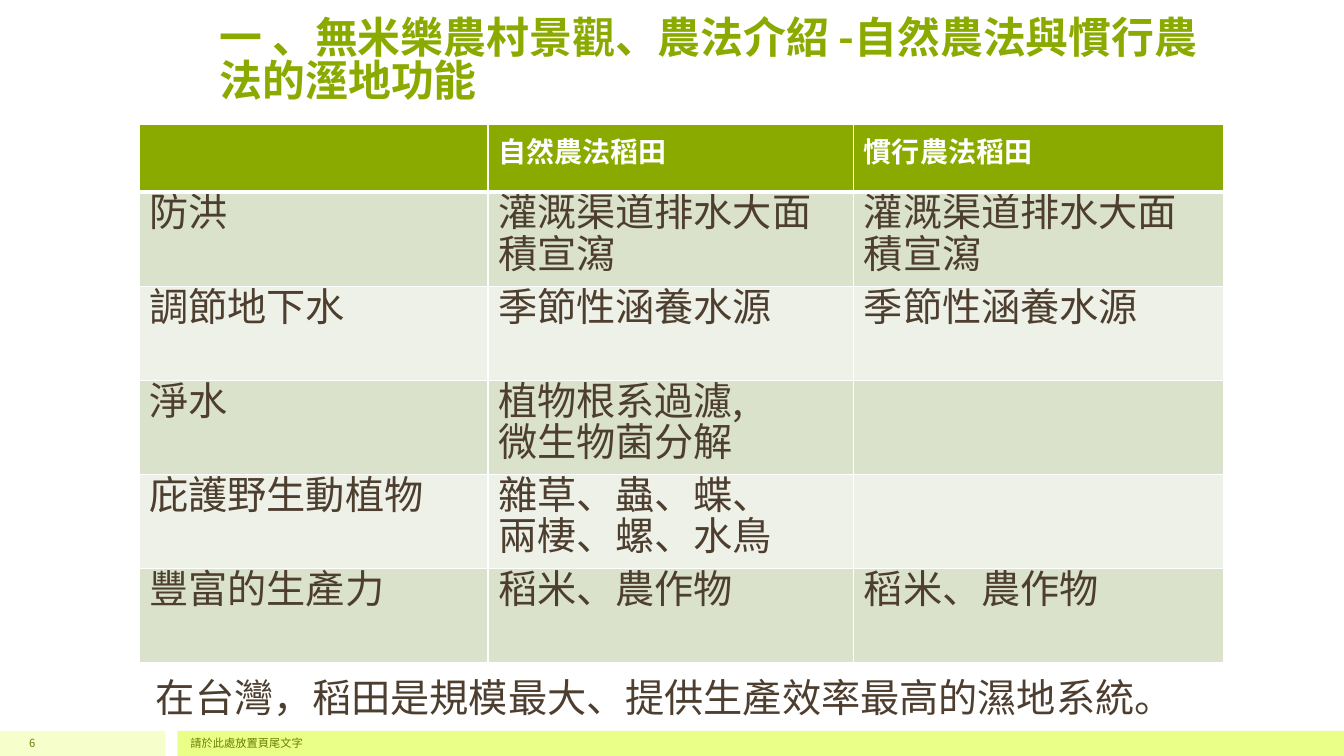
from dataclasses import dataclass

import lxml.etree
import pptx
import pptx.dml.color
import pptx.enum.shapes
import pptx.enum.text
import pptx.oxml.ns
import pptx.util

Cm, Pt = pptx.util.Cm, pptx.util.Pt
RGB = pptx.dml.color.RGBColor.from_string
ALIGN = pptx.enum.text.PP_ALIGN
ANCHOR = pptx.enum.text.MSO_ANCHOR
qn = pptx.oxml.ns.qn


@dataclass(frozen=True)
class Theme:
    green: str = "8BAA00"
    dark_green: str = "688000"
    brown: str = "4D3E2F"
    white: str = "FFFFFF"
    bands: tuple[str, str] = ("DAE2CC", "EEF1E7")
    title_size: float = 30.6
    body_size: float = 28
    header_size: float = 20
    footer_size: float = 8
    cjk: str = "Noto Sans CJK TC"
    cell_font: str = "Noto Sans CJK SC"
    latin: str = "Calibri"


@dataclass(frozen=True)
class Box:
    left: float
    top: float
    width: float
    height: float

    def emu(self) -> tuple[int, int, int, int]:
        return Cm(self.left), Cm(self.top), Cm(self.width), Cm(self.height)


@dataclass(frozen=True)
class Style:
    size: float
    color: str
    font: str
    bold: bool = False
    align: ALIGN = ALIGN.LEFT
    spacing: float | int | None = None


@dataclass(frozen=True)
class Bar:
    box: Box
    color: str


@dataclass(frozen=True)
class Label:
    box: Box
    text: str
    style: Style
    anchor: ANCHOR


THEME = Theme()
LINE = Pt(29.4)
TITLE = Style(THEME.title_size, THEME.green, THEME.cjk, bold=True, spacing=0.83)
HEADER = Style(THEME.header_size, THEME.white, THEME.latin, bold=True, spacing=LINE)
CELL = Style(THEME.body_size, THEME.brown, THEME.cell_font, spacing=LINE)
STATEMENT = Style(THEME.body_size, THEME.brown, THEME.latin, spacing=0.9)
FOOTER = Style(THEME.footer_size, THEME.dark_green, THEME.cjk)
NUMBER = Style(THEME.footer_size, THEME.dark_green, THEME.cjk, align=ALIGN.RIGHT)

WIDTH, HEIGHT = 33.87, 19.05
BAR_TOP, BAR_HEIGHT = 18.42, 0.63
BARS = [
    Bar(Box(0, BAR_TOP, 4.17, BAR_HEIGHT), "F6FFCC"),
    Bar(Box(4.47, BAR_TOP, 29.4, BAR_HEIGHT), "E9FF88"),
]
LABELS = [
    Label(Box(4.55, BAR_TOP, 25.4, BAR_HEIGHT), "請於此處放置頁尾文字", FOOTER, ANCHOR.MIDDLE),
    Label(Box(0, BAR_TOP, 1.14, BAR_HEIGHT), "6", NUMBER, ANCHOR.MIDDLE),
    Label(Box(3.68, 16.97, 27.13, 1.45),
          "在台灣，稻田是規模最大、提供生產效率最高的濕地系統。", STATEMENT, ANCHOR.TOP),
]
TITLE_BOX = Box(5.28, 0.43, 26.04, 2.34)
TITLE_TEXT = "一 、無米樂農村景觀、農法介紹 -自然農法與慣行農法的溼地功能"

TABLE_LEFT, TABLE_TOP = 3.51, 3.14
COLUMNS = [8.79, 9.22, 9.32]
HEADER_HEIGHT, ROW_HEIGHT = 1.7, 2.37
ROWS = [
    ("", "自然農法稻田", "慣行農法稻田"),
    ("防洪", "灌溉渠道排水大面\n積宣瀉", "灌溉渠道排水大面\n積宣瀉"),
    ("調節地下水", "季節性涵養水源", "季節性涵養水源"),
    ("淨水", "植物根系過濾,\n微生物菌分解", ""),
    ("庇護野生動植物", "雜草、蟲、蝶、\n兩棲、螺、水鳥", ""),
    ("豐富的生產力", "稻米、農作物", "稻米、農作物"),
]


def write(tf, text: str, style: Style) -> None:
    tf.text = text
    for p in tf.paragraphs:
        p.alignment = style.align
        p.line_spacing = style.spacing
        font = p.font
        font.name, font.size, font.bold = style.font, Pt(style.size), style.bold
        font.color.rgb = RGB(style.color)
        # East Asian typeface follows the Latin one in the schema
        latin = p._p.pPr.find(qn("a:defRPr")).find(qn("a:latin"))
        ea = lxml.etree.Element(qn("a:ea"))
        ea.set("typeface", THEME.cjk if style.font == THEME.latin else style.font)
        latin.addnext(ea)


def add_bar(s, bar: Bar) -> None:
    sp = s.shapes.add_shape(pptx.enum.shapes.MSO_SHAPE.RECTANGLE, *bar.box.emu())
    sp.shadow.inherit = False
    sp.fill.solid()
    sp.fill.fore_color.rgb = RGB(bar.color)
    sp.line.fill.background()


def add_label(s, label: Label) -> None:
    tf = s.shapes.add_textbox(*label.box.emu()).text_frame
    tf.word_wrap = True
    tf.vertical_anchor = label.anchor
    write(tf, label.text, label.style)


def set_title(s) -> None:
    sp = s.shapes.title
    sp.left, sp.top, sp.width, sp.height = TITLE_BOX.emu()
    tf = sp.text_frame
    tf.auto_size = pptx.enum.text.MSO_AUTO_SIZE.NONE
    tf.vertical_anchor = ANCHOR.BOTTOM
    write(tf, TITLE_TEXT, TITLE)


def set_borders(cell, bottom: float) -> None:
    tc_pr = cell._tc.get_or_add_tcPr()
    widths = {"lnL": 1, "lnR": 1, "lnT": 1, "lnB": bottom}
    for i, (tag, width) in enumerate(widths.items()):
        ln = lxml.etree.Element(qn(f"a:{tag}"), w=str(Pt(width)))
        fill = lxml.etree.SubElement(ln, qn("a:solidFill"))
        lxml.etree.SubElement(fill, qn("a:srgbClr"), val=THEME.white)
        tc_pr.insert(i, ln)


def add_comparison(s) -> None:
    heights = [HEADER_HEIGHT] + [ROW_HEIGHT] * (len(ROWS) - 1)
    box = Box(TABLE_LEFT, TABLE_TOP, sum(COLUMNS), sum(heights))
    table = s.shapes.add_table(len(ROWS), len(COLUMNS), *box.emu()).table
    for column, width in zip(table.columns, COLUMNS):
        column.width = Cm(width)
    for r, (texts, height) in enumerate(zip(ROWS, heights)):
        table.rows[r].height = Cm(height)
        for c, text in enumerate(texts):
            cell = table.cell(r, c)
            cell.fill.solid()
            cell.fill.fore_color.rgb = RGB(THEME.bands[(r - 1) % 2] if r else THEME.green)
            set_borders(cell, bottom=1 if r else 3)
            if text:
                write(cell.text_frame, text, CELL if r else HEADER)


def main() -> None:
    prs = pptx.Presentation()
    prs.slide_width, prs.slide_height = Cm(WIDTH), Cm(HEIGHT)
    s = prs.slides.add_slide(prs.slide_layouts[5])
    # Footer bars
    for bar in BARS:
        add_bar(s, bar)
    # Title and table
    set_title(s)
    add_comparison(s)
    # Footer texts and closing statement
    for label in LABELS:
        add_label(s, label)
    prs.save("out.pptx")


if __name__ == "__main__":
    main()
